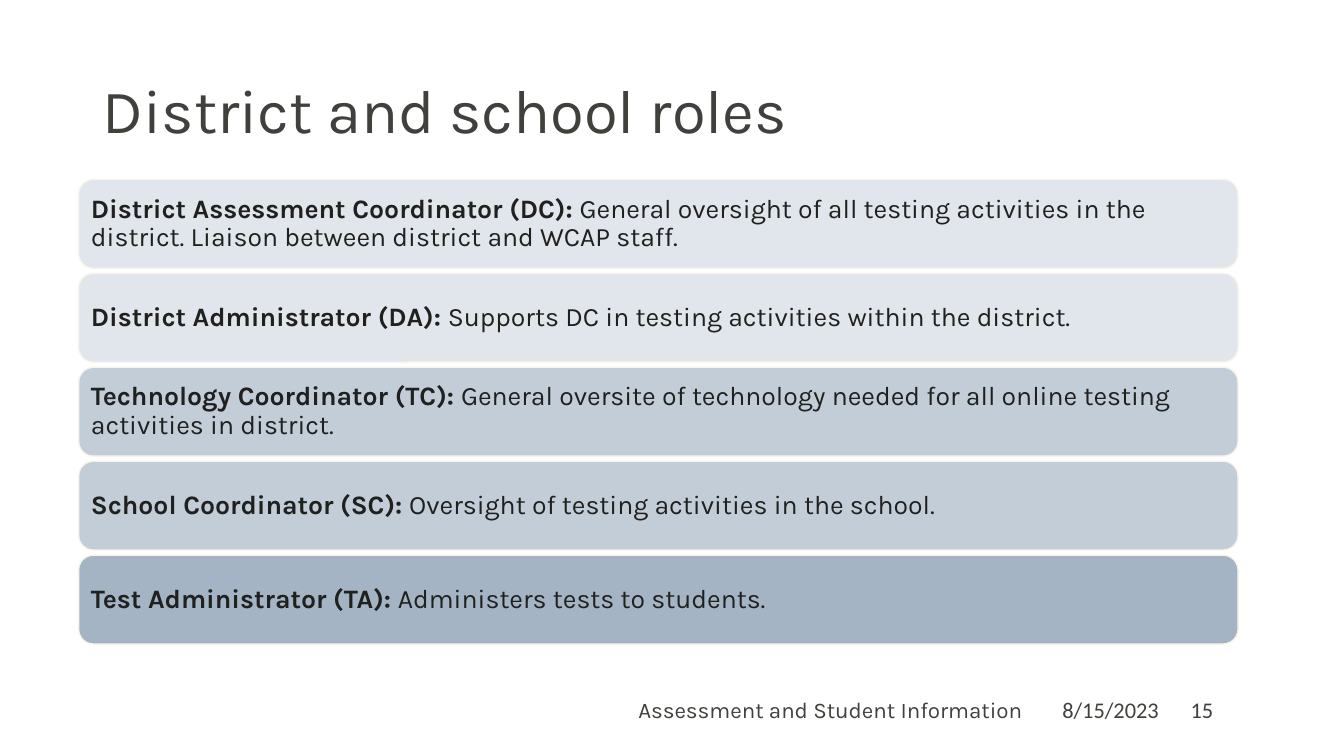
from pptx import Presentation
from pptx.dml.color import RGBColor
from pptx.enum.shapes import MSO_SHAPE as Shape
from pptx.enum.text import MSO_ANCHOR as Anchor, PP_ALIGN as Align
from pptx.util import Inches, Pt

WHITE = RGBColor(0xFF, 0xFF, 0xFF)
CREAM = RGBColor(0xF7, 0xF5, 0xEB)
PALE = RGBColor(0xE1, 0xE6, 0xEC)
MIST = RGBColor(0xC3, 0xCD, 0xD8)
STEEL = RGBColor(0xA4, 0xB4, 0xC5)
INK = RGBColor(0x20, 0x20, 0x1F)
GREY = RGBColor(0x40, 0x40, 0x3D)

ROLES = [
    ("District Assessment Coordinator (DC): ",
     "General oversight of all testing activities in the district. "
     "Liaison between district and WCAP staff.", PALE),
    ("District Administrator (DA): ",
     "Supports DC in testing activities within the district.", PALE),
    ("Technology Coordinator (TC): ",
     "General oversite of technology needed for all online testing "
     "activities in district.", MIST),
    ("School Coordinator (SC): ",
     "Oversight of testing activities in the school.", MIST),
    ("Test Administrator (TA): ", "Administers tests to students.", STEEL),
]
FOOTER = [
    (3.88, 6.36, "Assessment and Student Information", "Karla", Align.RIGHT),
    (10.18, 1.67, "8/15/2023", "Calibri", Align.CENTER),
    (11.71, 0.7, "15", "Calibri", Align.LEFT),
]


def write(shape, runs, size, color, face="Karla", align=Align.LEFT,
          inset=(0.1, 0.05), space=1.0):
    """Fill a shape with one paragraph of (text, bold) runs."""
    frame = shape.text_frame
    side, edge = (Inches(n) for n in inset)
    form = {"word_wrap": True, "vertical_anchor": Anchor.MIDDLE,
            "margin_left": side, "margin_right": side,
            "margin_top": edge, "margin_bottom": edge}
    for name, value in form.items():
        setattr(frame, name, value)
    para = frame.paragraphs[0]
    para.alignment = align
    para.line_spacing = space
    for text, bold in runs:
        run = para.add_run()
        run.text = text
        for name, value in {"name": face, "size": Pt(size), "bold": bold}.items():
            setattr(run.font, name, value)
        run.font.color.rgb = color


def add_title(slide, box):
    """Place the heading in its box."""
    head = slide.shapes.add_textbox(*map(Inches, box))
    write(head, [("District and school roles", False)], 44, GREY, space=0.9)


def add_roles(slide, box):
    """Stack one rounded bar per role, evenly spaced down the box."""
    left, top, width, height = box
    gap = 0.05
    tall = (height + gap) / len(ROLES) - gap
    for row, (role, duty, fill) in enumerate(ROLES):
        place = (left, top + row * (tall + gap), width, tall)
        bar = slide.shapes.add_shape(Shape.ROUNDED_RECTANGLE, *map(Inches, place))
        bar.shadow.inherit = False
        bar.fill.solid()
        bar.fill.fore_color.rgb = fill
        bar.line.color.rgb = CREAM
        bar.line.width = Pt(1)
        write(bar, [(role, True), (duty, False)], 19, INK,
              inset=(0.08, 0.08), space=0.9)


def add_footer(slide, top, height):
    """Set the footer text, date and page number on one line."""
    for left, width, text, face, align in FOOTER:
        note = slide.shapes.add_textbox(*map(Inches, (left, top, width, height)))
        write(note, [(text, False)], 16, GREY, face, align)


def main():
    """Build the slide and save it."""
    deck = Presentation()
    deck.slide_width, deck.slide_height = Inches(13.33), Inches(7.5)
    slide = deck.slides.add_slide(deck.slide_layouts[6])
    slide.background.fill.solid()
    slide.background.fill.fore_color.rgb = WHITE
    add_title(slide, (0.92, 0.4, 11.5, 1.45))
    add_roles(slide, (0.78, 1.78, 11.5, 4.61))
    add_footer(slide, 6.84, 0.4)
    deck.save("out.pptx")


if __name__ == "__main__":
    main()
